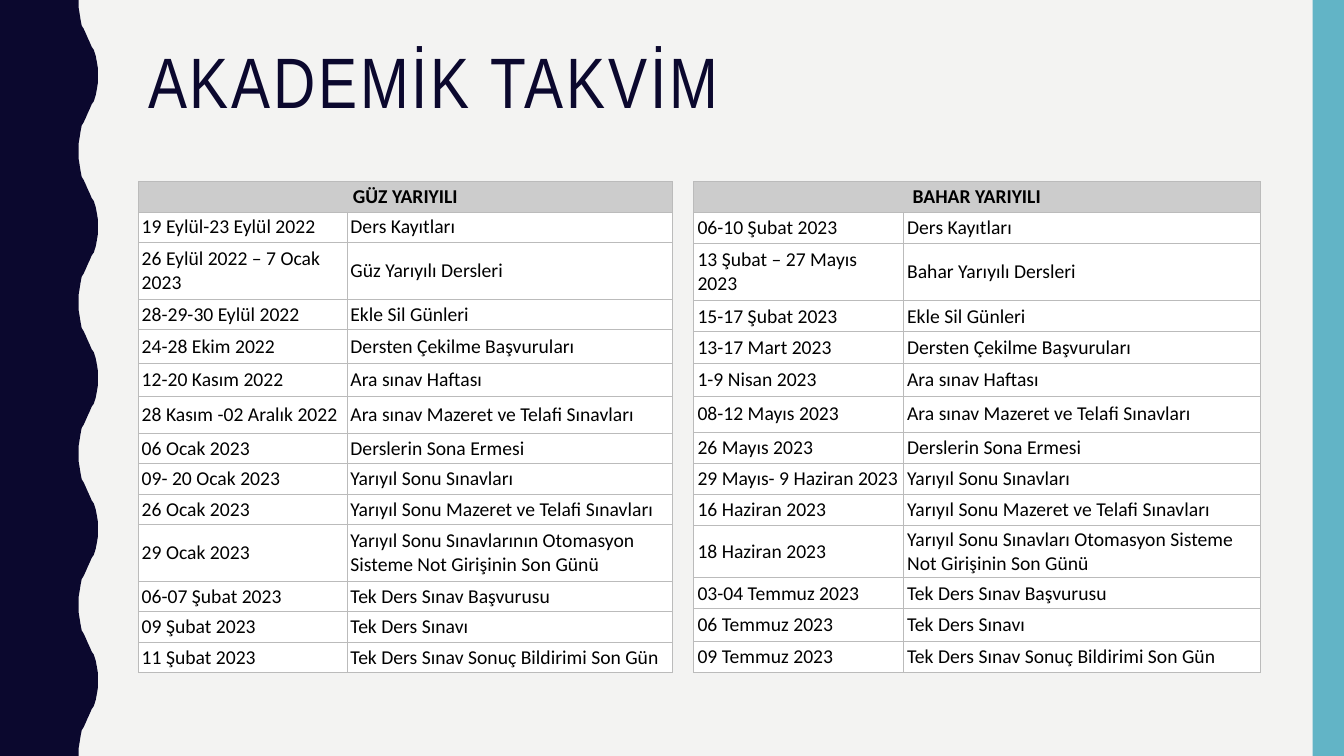
"""Build the academic calendar slide with one table per term."""
from dataclasses import dataclass

from lxml import etree
from pptx import Presentation
from pptx.dml.color import RGBColor
from pptx.enum.shapes import MSO_SHAPE
from pptx.enum.text import MSO_ANCHOR, PP_ALIGN
from pptx.oxml.ns import qn
from pptx.slide import Slide
from pptx.table import _Cell
from pptx.util import Inches, Pt

RECT = MSO_SHAPE.RECTANGLE
TOP, MIDDLE = MSO_ANCHOR.TOP, MSO_ANCHOR.MIDDLE
LEFT, CENTER = PP_ALIGN.LEFT, PP_ALIGN.CENTER
WIDE, HIGH = Inches(13.33), Inches(7.5)


@dataclass(frozen=True)
class Theme:
    """Colours, fonts and type sizes."""
    back: str = "F3F3F2"
    navy: str = "0B082E"
    teal: str = "62B4C6"
    head: str = "CCCCCC"
    cell: str = "FFFFFF"
    rule: str = "BBBBBB"
    ink: str = "000000"
    title_font: str = "Arial Narrow"
    body_font: str = "Calibri"
    title_size: int = 51
    body_size: int = 14
    rule_size: float = 0.75
    track: int = 2


@dataclass(frozen=True)
class Row:
    """A date, its event and the row height in percent of the slide."""
    date: str
    event: str
    tall: float


@dataclass(frozen=True)
class Term:
    """A term table; lengths are percents of the slide."""
    name: str
    left: float
    cols: tuple[float, float]
    head: float
    pad: float
    rows: tuple[Row, ...]


THEME = Theme()
TABLE_TOP = 24
WAVE_LEFT, WAVE_DEPTH, WAVES = 5.85, 1.43, 5
HALF_WAVE = (
    (0, 0), (0, 0.05), (0.05, 0.09), (0.1, 0.13), (0.16, 0.17),
    (0.26, 0.19), (0.37, 0.22), (0.47, 0.25), (0.58, 0.28), (0.68, 0.31),
    (0.79, 0.33), (0.89, 0.37), (0.95, 0.41), (1, 0.45), (1, 0.5),
)
TERMS = (
    Term("GÜZ YARIYILI", 10.32, (15.53, 24.16), 4.04, 0.03, (
        Row("19 Eylül-23 Eylül 2022", "Ders Kayıtları", 4.04),
        Row("26 Eylül 2022 – 7 Ocak 2023", "Güz Yarıyılı Dersleri", 7.5),
        Row("28-29-30 Eylül 2022", "Ekle Sil Günleri", 4.04),
        Row("24-28 Ekim 2022", "Dersten Çekilme Başvuruları", 4.45),
        Row("12-20 Kasım 2022", "Ara sınav Haftası", 4.45),
        Row("28 Kasım -02 Aralık 2022", "Ara sınav Mazeret ve Telafi Sınavları", 4.8),
        Row("06 Ocak 2023", "Derslerin Sona Ermesi", 4.04),
        Row("09- 20 Ocak 2023", "Yarıyıl Sonu Sınavları", 4.04),
        Row("26 Ocak 2023", "Yarıyıl Sonu Mazeret ve Telafi Sınavları", 4.04),
        Row("29 Ocak 2023",
            "Yarıyıl Sonu Sınavlarının Otomasyon Sisteme Not Girişinin Son Günü", 7.5),
        Row("06-07 Şubat 2023", "Tek Ders Sınav Başvurusu", 4.04),
        Row("09 Şubat 2023", "Tek Ders Sınavı", 4.04),
        Row("11 Şubat 2023", "Tek Ders Sınav Sonuç Bildirimi Son Gün", 4.04),
    )),
    Term("BAHAR YARIYILI", 51.6, (15.6, 26.56), 4.1, 0.04, (
        Row("06-10 Şubat 2023", "Ders Kayıtları", 4.1),
        Row("13 Şubat – 27 Mayıs 2023", "Bahar Yarıyılı Dersleri", 7.6),
        Row("15-17 Şubat 2023", "Ekle Sil Günleri", 4.1),
        Row("13-17 Mart 2023", "Dersten Çekilme Başvuruları", 4.25),
        Row("1-9 Nisan 2023", "Ara sınav Haftası", 4.25),
        Row("08-12 Mayıs 2023", "Ara sınav Mazeret ve Telafi Sınavları", 4.8),
        Row("26 Mayıs 2023", "Derslerin Sona Ermesi", 4.1),
        Row("29 Mayıs- 9 Haziran 2023", "Yarıyıl Sonu Sınavları", 4.1),
        Row("16 Haziran 2023", "Yarıyıl Sonu Mazeret ve Telafi Sınavları", 4.1),
        Row("18 Haziran 2023",
            "Yarıyıl Sonu Sınavları Otomasyon Sisteme Not Girişinin Son Günü", 6.95),
        Row("03-04 Temmuz 2023", "Tek Ders Sınav Başvurusu", 4.1),
        Row("06 Temmuz 2023", "Tek Ders Sınavı", 4.33),
        Row("09 Temmuz 2023", "Tek Ders Sınav Sonuç Bildirimi Son Gün", 4.1),
    )),
)


def across(share: float) -> int:
    """Turn a percent of the slide width into a length."""
    return round(WIDE * share / 100)


def down(share: float) -> int:
    """Turn a percent of the slide height into a length."""
    return round(HIGH * share / 100)


def paint(item, tone: str) -> None:
    """Fill a shape flat, with no line or shadow."""
    item.fill.solid()
    item.fill.fore_color.rgb = RGBColor.from_string(tone)
    item.line.fill.background()
    item.shadow.inherit = False


def draw_wave(slide: Slide) -> None:
    """Draw the wavy band on the left edge."""
    cycle = HALF_WAVE + tuple((x, 1 - y) for x, y in HALF_WAVE[-2::-1])
    step = 100 / WAVES
    edge = [
        (across(WAVE_LEFT + WAVE_DEPTH * x), down(step * (turn + y)))
        for turn in range(WAVES) for x, y in cycle
    ]
    build = slide.shapes.build_freeform(0, 0)
    build.add_line_segments(edge + [(0, HIGH)], close=True)
    paint(build.convert_to_shape(), THEME.navy)


def draw_title(slide: Slide, text: str) -> None:
    """Write the slide title."""
    box = slide.shapes.add_textbox(across(10.28), down(5.6), across(83.5), down(21.73))
    frame = box.text_frame
    frame.word_wrap = True
    frame.vertical_anchor = TOP
    para = frame.paragraphs[0]
    para.text = text
    para.line_spacing = 0.9
    font = para.font
    font.name, font.size = THEME.title_font, Pt(THEME.title_size)
    font.color.rgb = RGBColor.from_string(THEME.navy)
    para._p.pPr.find(qn("a:defRPr")).set("spc", str(THEME.track * 100))


def rule_cell(cell: _Cell) -> None:
    """Draw thin rules on all four sides of a cell."""
    props = cell._tc.get_or_add_tcPr()
    for side in ("lnL", "lnR", "lnT", "lnB"):
        line = etree.SubElement(props, qn(f"a:{side}"), w=str(Pt(THEME.rule_size)))
        fill = etree.SubElement(line, qn("a:solidFill"))
        etree.SubElement(fill, qn("a:srgbClr"), val=THEME.rule)


def fill_cell(cell: _Cell, text: str, pad: float, head: bool) -> None:
    """Write and style one table cell."""
    rule_cell(cell)
    cell.fill.solid()
    cell.fill.fore_color.rgb = RGBColor.from_string(THEME.head if head else THEME.cell)
    cell.margin_left = cell.margin_right = Inches(pad)
    cell.margin_top = cell.margin_bottom = Inches(0.02)
    cell.vertical_anchor = MIDDLE
    para = cell.text_frame.paragraphs[0]
    para.text = text
    para.alignment = CENTER if head else LEFT
    font = para.font
    font.name, font.size, font.bold = THEME.body_font, Pt(THEME.body_size), head
    font.color.rgb = RGBColor.from_string(THEME.ink)


def draw_term(slide: Slide, term: Term) -> None:
    """Draw the table of one term."""
    rows = (Row(term.name, "", term.head),) + term.rows
    table = slide.shapes.add_table(
        len(rows), len(term.cols), across(term.left), down(TABLE_TOP),
        across(sum(term.cols)), down(sum(row.tall for row in rows)),
    ).table
    table.first_row = table.horz_banding = False
    for col, wide in zip(table.columns, term.cols):
        col.width = across(wide)
    for i, row in enumerate(rows):
        table.rows[i].height = down(row.tall)
        for cell, text in zip(table.rows[i].cells, (row.date, row.event)):
            fill_cell(cell, text, term.pad, i == 0)
    table.cell(0, 0).merge(table.cell(0, 1))


def main() -> None:
    """Build and save the slide."""
    deck = Presentation()
    deck.slide_width, deck.slide_height = WIDE, HIGH
    slide = deck.slides.add_slide(deck.slide_layouts[6])
    slide.background.fill.solid()
    slide.background.fill.fore_color.rgb = RGBColor.from_string(THEME.back)
    draw_wave(slide)
    band = slide.shapes.add_shape(RECT, across(97.67), 0, across(2.33), HIGH)
    paint(band, THEME.teal)
    draw_title(slide, "AKADEMİK TAKVİM")
    for term in TERMS:
        draw_term(slide, term)
    deck.save("out.pptx")


if __name__ == "__main__":
    main()
